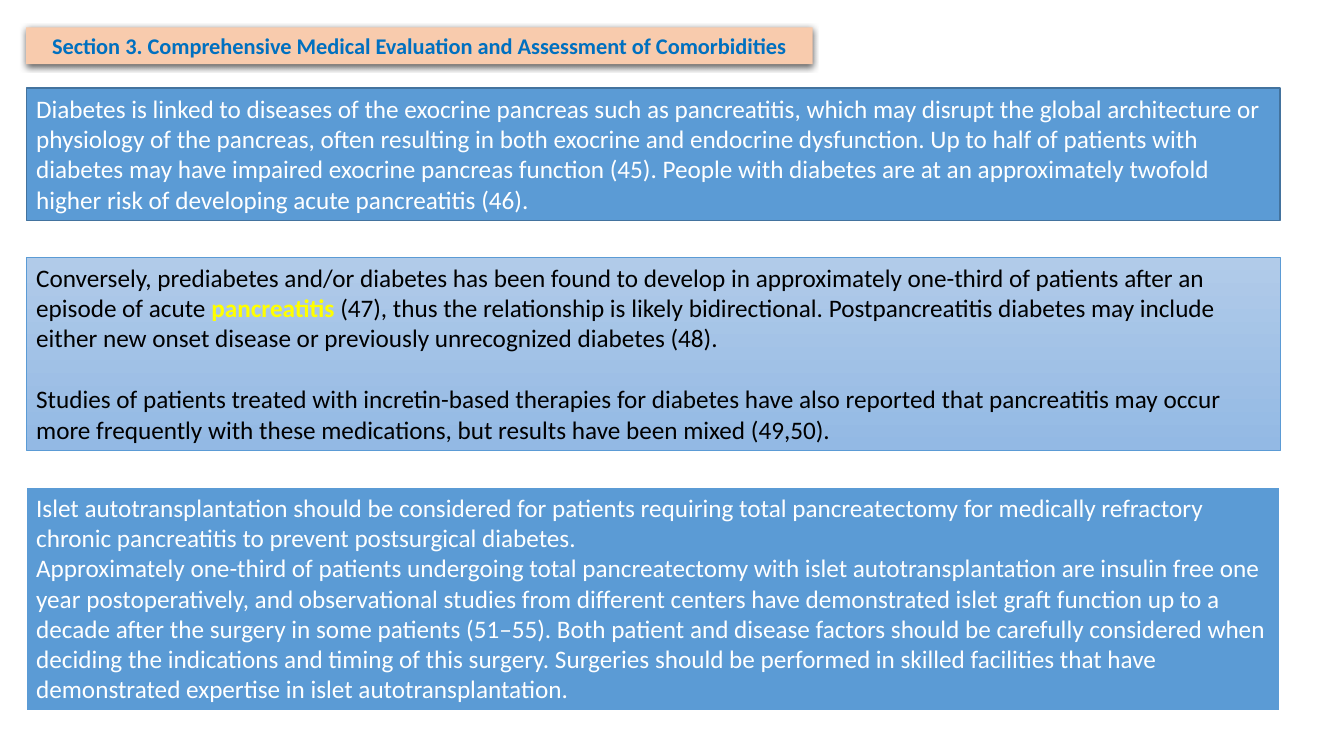
from pptx import Presentation
from pptx.dml.color import RGBColor
from pptx.enum.shapes import MSO_SHAPE as Shape
from pptx.enum.text import MSO_ANCHOR as Anchor, MSO_AUTO_SIZE as Auto, PP_ALIGN as Align
from pptx.oxml import parse_xml
from pptx.oxml.ns import nsdecls
from pptx.util import Pt

PX = 9525
HUES = {"blue": "5B9BD5", "edge": "43739E", "white": "FFFFFF", "black": "000000",
        "yellow": "FFFF00", "peach": "F8CBAD", "title": "0070C0",
        "light": "B1CBE9", "deep": "93B9E4"}

TITLE = "Section 3. Comprehensive Medical Evaluation and Assessment of Comorbidities"
LEFT, WIDE, TOP, GAP = 25, 1194, 84, 35

# Each paragraph is a list of runs; a run is (text, colour, bold).
PANELS = [
    {"high": 126, "fill": ["blue"], "line": ("edge", 1), "space": 0, "text": [
        [("Diabetes is linked to diseases of the exocrine pancreas such as pancreatitis, which may "
          "disrupt the global architecture or physiology of the pancreas, often resulting in both "
          "exocrine and endocrine dysfunction. Up to half of patients with diabetes may have "
          "impaired exocrine pancreas function (45). People with diabetes are at an approximately "
          "twofold higher risk of developing acute pancreatitis (46).", "white", False)]]},
    {"high": 184, "fill": ["light", "deep"], "line": ("blue", 0.5), "space": 22, "text": [
        [("Conversely, prediabetes and/or diabetes has been found to develop in approximately "
          "one-third of patients after an episode of acute ", "black", False),
         ("pancreatitis ", "yellow", True),
         ("(47), thus the relationship is likely bidirectional. Postpancreatitis diabetes may "
          "include either new onset disease or previously unrecognized diabetes (48).",
          "black", False)],
        [("Studies of patients treated with incretin-based therapies for diabetes have also "
          "reported that pancreatitis may occur more frequently with these medications, but "
          "results have been mixed (49,50).", "black", False)]]},
    {"high": 213, "fill": ["blue"], "line": ("white", 1.5), "space": 0, "text": [
        [("Islet autotransplantation should be considered for patients requiring total "
          "pancreatectomy for medically refractory chronic pancreatitis to prevent postsurgical "
          "diabetes.", "white", False)],
        [("Approximately one-third of patients undergoing total pancreatectomy with islet "
          "autotransplantation are insulin free one year postoperatively, and observational "
          "studies from different centers have demonstrated islet graft function up to a decade "
          "after the surgery in some patients (51–55). Both patient and disease factors should be "
          "carefully considered when deciding the indications and timing of this surgery. "
          "Surgeries should be performed in skilled facilities that have demonstrated expertise "
          "in islet autotransplantation.", "white", False)]]},
]


def rgb(name):
    return RGBColor.from_string(HUES[name])


def paint(fill, names):
    """Fill solid with one colour, or top to bottom with two."""
    if len(names) == 1:
        fill.solid()
        fill.fore_color.rgb = rgb(names[0])
        return
    fill.gradient()
    fill.gradient_angle = 270
    for stop, name in zip(fill.gradient_stops, names):
        stop.color.rgb = rgb(name)


def write(shape, paras, size, align, anchor, space=0):
    frame = shape.text_frame
    style = {"word_wrap": True, "auto_size": Auto.NONE, "vertical_anchor": anchor}
    for key, value in style.items():
        setattr(frame, key, value)
    for i, runs in enumerate(paras):
        para = frame.add_paragraph() if i else frame.paragraphs[0]
        look = {"alignment": align, "line_spacing": 1.0, "space_before": Pt(space if i else 0)}
        for key, value in look.items():
            setattr(para, key, value)
        for text, hue, bold in runs:
            run = para.add_run()
            run.text = text
            for key, value in {"name": "Calibri", "size": Pt(size), "bold": bold}.items():
                setattr(run.font, key, value)
            run.font.color.rgb = rgb(hue)


def add_title(slide):
    title = slide.shapes.title
    box = {"left": LEFT, "top": 26, "width": 749, "height": 35}
    for key, value in box.items():
        setattr(title, key, value * PX)
    paint(title.fill, ["peach"])
    title.line.fill.background()
    write(title, [[(TITLE, "title", True)]], 16, Align.CENTER, Anchor.MIDDLE)
    title._element.spPr.append(parse_xml(
        f'<a:effectLst {nsdecls("a")}><a:outerShdw blurRad="{Pt(4.5)}" dist="{Pt(1.5)}" '
        f'dir="5400000" algn="ctr" rotWithShape="0"><a:srgbClr val="{HUES["black"]}">'
        '<a:alpha val="63000"/></a:srgbClr></a:outerShdw></a:effectLst>'))


def add_panel(slide, panel, top):
    box = [n * PX for n in (LEFT, top, WIDE, panel["high"])]
    shape = slide.shapes.add_shape(Shape.RECTANGLE, *box)
    shape.shadow.inherit = False
    paint(shape.fill, panel["fill"])
    hue, width = panel["line"]
    shape.line.color.rgb = rgb(hue)
    shape.line.width = Pt(width)
    write(shape, panel["text"], 18, Align.LEFT, Anchor.TOP, panel["space"])


def main():
    deck = Presentation()
    deck.slide_width, deck.slide_height = 1280 * PX, 720 * PX
    slide = deck.slides.add_slide(deck.slide_layouts[5])
    add_title(slide)
    top = TOP
    for panel in PANELS:
        add_panel(slide, panel, top)
        top += panel["high"] + GAP
    deck.save("out.pptx")


if __name__ == "__main__":
    main()
